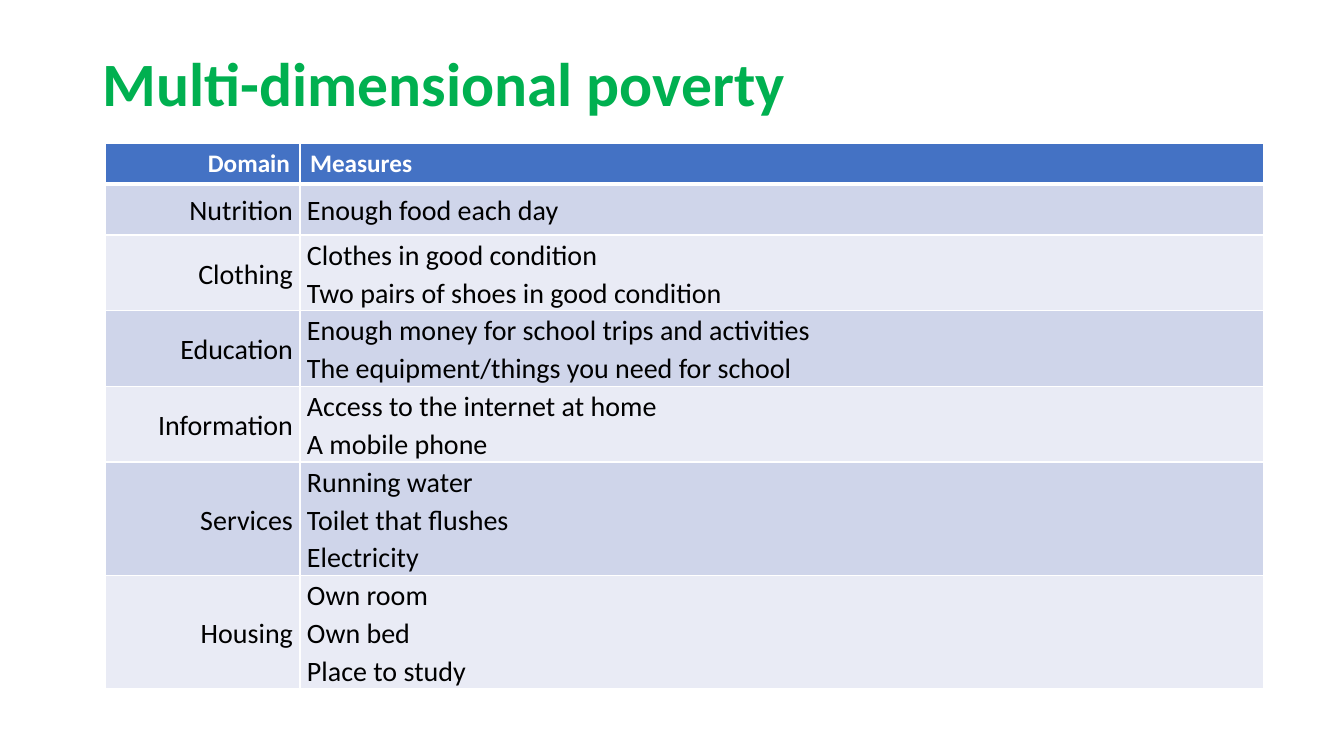
from lxml import etree
from pptx import Presentation
from pptx.dml.color import RGBColor
from pptx.enum.text import MSO_ANCHOR, PP_ALIGN
from pptx.oxml.ns import qn
from pptx.util import Emu, Pt

LEFT, RIGHT = PP_ALIGN.LEFT, PP_ALIGN.RIGHT
TOP, MIDDLE = MSO_ANCHOR.TOP, MSO_ANCHOR.MIDDLE

# Content
TITLE = "Multi-dimensional poverty"
HEAD = ("Domain", ["Measures"])
DOMAINS = [
    ("Nutrition", ["Enough food each day"]),
    ("Clothing", ["Clothes in good condition",
                  "Two pairs of shoes in good condition"]),
    ("Education", ["Enough money for school trips and activities",
                   "The equipment/things you need for school"]),
    ("Information", ["Access to the internet at home", "A mobile phone"]),
    ("Services", ["Running water", "Toilet that flushes", "Electricity"]),
    ("Housing", ["Own room", "Own bed", "Place to study"]),
]

# Style and layout, lengths in px
FONT = "Calibri"
COLORS = {"title": "00B050", "head": "4472C4", "odd": "CFD5EA",
          "even": "E9EBF5", "white": "FFFFFF", "text": "000000"}
SLIDE = (1344, 756)
TITLE_BOX = (93, 40, 867, 94)
TABLE_AT = (105, 143)
COLS = (195, 964)
HEAD_H, FIRST_H = 41, 51
PAD = 7
LINE_PT = 27


def px(n):
    return Emu(round(n * 914400 / 100.8))


def rgb(name):
    return RGBColor.from_string(COLORS[name])


def write(para, text, size, color, bold):
    run = para.add_run()
    run.text = text
    font = run.font
    font.name, font.size, font.bold = FONT, Pt(size), bold
    font.color.rgb = rgb(color)


def border(cell, base):
    props = cell._tc.get_or_add_tcPr()
    for side, width in (("L", 1), ("R", 1), ("T", 1), ("B", base)):
        line = etree.SubElement(props, qn("a:ln" + side), w=str(Pt(width)))
        fill = etree.SubElement(line, qn("a:solidFill"))
        etree.SubElement(fill, qn("a:srgbClr"), val=COLORS["white"])


def fill_cell(cell, lines, align, row):
    head = row == 0
    border(cell, 3 if head else 1)
    cell.fill.solid()
    cell.fill.fore_color.rgb = rgb("head" if head else "odd" if row % 2 else "even")
    cell.vertical_anchor = TOP if head else MIDDLE
    if not head:
        cell.margin_left = cell.margin_right = px(PAD)
        cell.margin_top = cell.margin_bottom = 0
    frame = cell.text_frame
    for i, text in enumerate(lines):
        para = frame.add_paragraph() if i else frame.paragraphs[0]
        para.alignment = align
        if head:
            write(para, text, 18, "white", True)
        else:
            para.line_spacing = Pt(LINE_PT)
            write(para, text, 20, "text", False)


def main():
    deck = Presentation()
    deck.slide_width, deck.slide_height = map(px, SLIDE)
    slide = deck.slides.add_slide(deck.slide_layouts[6])

    # Title
    frame = slide.shapes.add_textbox(*map(px, TITLE_BOX)).text_frame
    frame.word_wrap = True
    frame.vertical_anchor = MIDDLE
    frame.paragraphs[0].line_spacing = 0.9
    write(frame.paragraphs[0], TITLE, 44, "title", True)

    # Table: row heights follow the number of measures
    rows = [HEAD] + DOMAINS
    highs = [px(HEAD_H), px(FIRST_H)]
    highs += [Pt(LINE_PT * len(lines)) for _, lines in DOMAINS[1:]]
    table = slide.shapes.add_table(
        len(rows), len(COLS), *map(px, TABLE_AT), px(sum(COLS)), Emu(sum(highs))).table
    for col, width in zip(table.columns, COLS):
        col.width = px(width)
    for r, (domain, lines) in enumerate(rows):
        table.rows[r].height = highs[r]
        fill_cell(table.cell(r, 0), [domain], RIGHT, r)
        fill_cell(table.cell(r, 1), lines, LEFT, r)

    deck.save("out.pptx")


if __name__ == "__main__":
    main()
